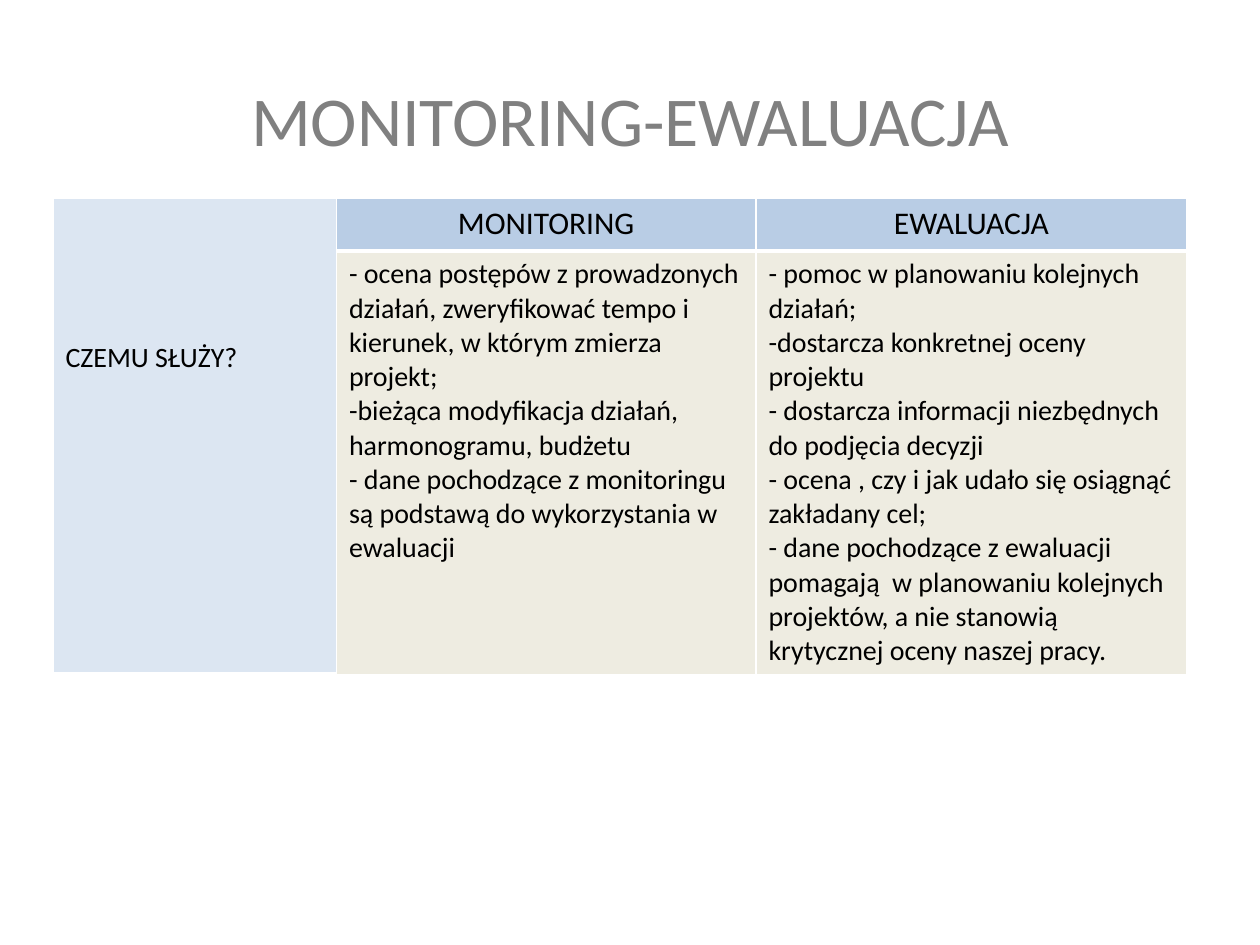
from dataclasses import dataclass

from lxml import etree
from pptx import Presentation
from pptx import util as u
from pptx.dml.color import RGBColor
from pptx.enum import text
from pptx.oxml.ns import qn


@dataclass(frozen=True)
class Theme:
    font: str = "Calibri"
    ink: str = "000000"
    grey: str = "808080"
    line: str = "FFFFFF"
    side: str = "DCE6F2"
    head: str = "B9CDE5"
    body: str = "EEECE1"
    title: int = 40
    label: int = 18
    small: int = 16


class Deck:
    def __init__(self, theme):
        self.theme = theme
        self.prs = Presentation()
        self.prs.slide_width, self.prs.slide_height = u.Inches(10), u.Inches(7.5)
        self.slide = self.prs.slides.add_slide(self.prs.slide_layouts[6])

    def place(self, x, y, w, h):
        """Turn shares of the slide into lengths."""
        wide, high = self.prs.slide_width, self.prs.slide_height
        return [int(n) for n in (x * wide, y * high, w * wide, h * high)]

    def label(self, frame, lines, size, color, align=None):
        frame.word_wrap = True
        frame.text = "\n".join(lines)
        for para in frame.paragraphs:
            para.alignment = align
            para.font.name = self.theme.font
            para.font.size = u.Pt(size)
            para.font.color.rgb = RGBColor.from_string(color)

    def title(self, words, box):
        frame = self.slide.shapes.add_textbox(*self.place(*box)).text_frame
        frame.vertical_anchor = text.MSO_ANCHOR.MIDDLE
        self.label(frame, [words], self.theme.title, self.theme.grey,
                   text.PP_ALIGN.CENTER)

    def table(self, box, cols, rows):
        """Add a grid whose column and row sizes are parts of its box."""
        x, y, w, h = self.place(*box)
        grid = self.slide.shapes.add_table(len(rows), len(cols), x, y, w, h).table
        grid.first_row = grid.horz_banding = False
        for col, part in zip(grid.columns, cols):
            col.width = int(w * part / sum(cols))
        for row, part in zip(grid.rows, rows):
            row.height = int(h * part / sum(rows))
        return grid

    def border(self, cell, base):
        props = cell._tc.get_or_add_tcPr()
        for side, width in zip("LRTB", (1, 1, 1, base)):
            line = etree.SubElement(props, qn(f"a:ln{side}"), w=str(u.Pt(width)))
            fill = etree.SubElement(line, qn("a:solidFill"))
            etree.SubElement(fill, qn("a:srgbClr"), val=self.theme.line)

    def cell(self, cell, lines, fill, size, base=1, align=None):
        self.border(cell, base)
        cell.fill.solid()
        cell.fill.fore_color.rgb = RGBColor.from_string(fill)
        self.label(cell.text_frame, lines, size, self.theme.ink, align)


GOALS = {
    "MONITORING": [
        "- ocena postępów z prowadzonych działań, zweryfikować tempo i kierunek, "
        "w którym zmierza projekt;",
        "-bieżąca modyfikacja działań, harmonogramu, budżetu",
        "- dane pochodzące z monitoringu są podstawą do wykorzystania w ewaluacji",
    ],
    "EWALUACJA": [
        "- pomoc w planowaniu kolejnych działań;",
        "-dostarcza konkretnej oceny projektu",
        "- dostarcza informacji niezbędnych do podjęcia decyzji",
        "- ocena , czy i jak udało się osiągnąć zakładany cel;",
        "- dane pochodzące z ewaluacji pomagają  w planowaniu kolejnych "
        "projektów, a nie stanowią krytycznej oceny naszej pracy.",
    ],
}


def main():
    look = Theme()
    deck = Deck(look)
    grid = deck.table((0.042, 0.21, 0.9, 0.5), (2.25, 3.33, 3.42), (0.42, 3.36))

    side = grid.cell(0, 0)
    side.merge(grid.cell(1, 0))
    deck.cell(side, ["CZEMU SŁUŻY?"], look.side, look.small, base=3)
    side.margin_top = u.Inches(1.13)

    for col, (name, goals) in enumerate(GOALS.items(), 1):
        deck.cell(grid.cell(0, col), [name], look.head, look.label, base=3,
                  align=text.PP_ALIGN.CENTER)
        deck.cell(grid.cell(1, col), goals, look.body, look.small)

    deck.title("MONITORING-EWALUACJA", (0.05, 0.04, 0.9, 0.17))
    deck.prs.save("out.pptx")


if __name__ == "__main__":
    main()
